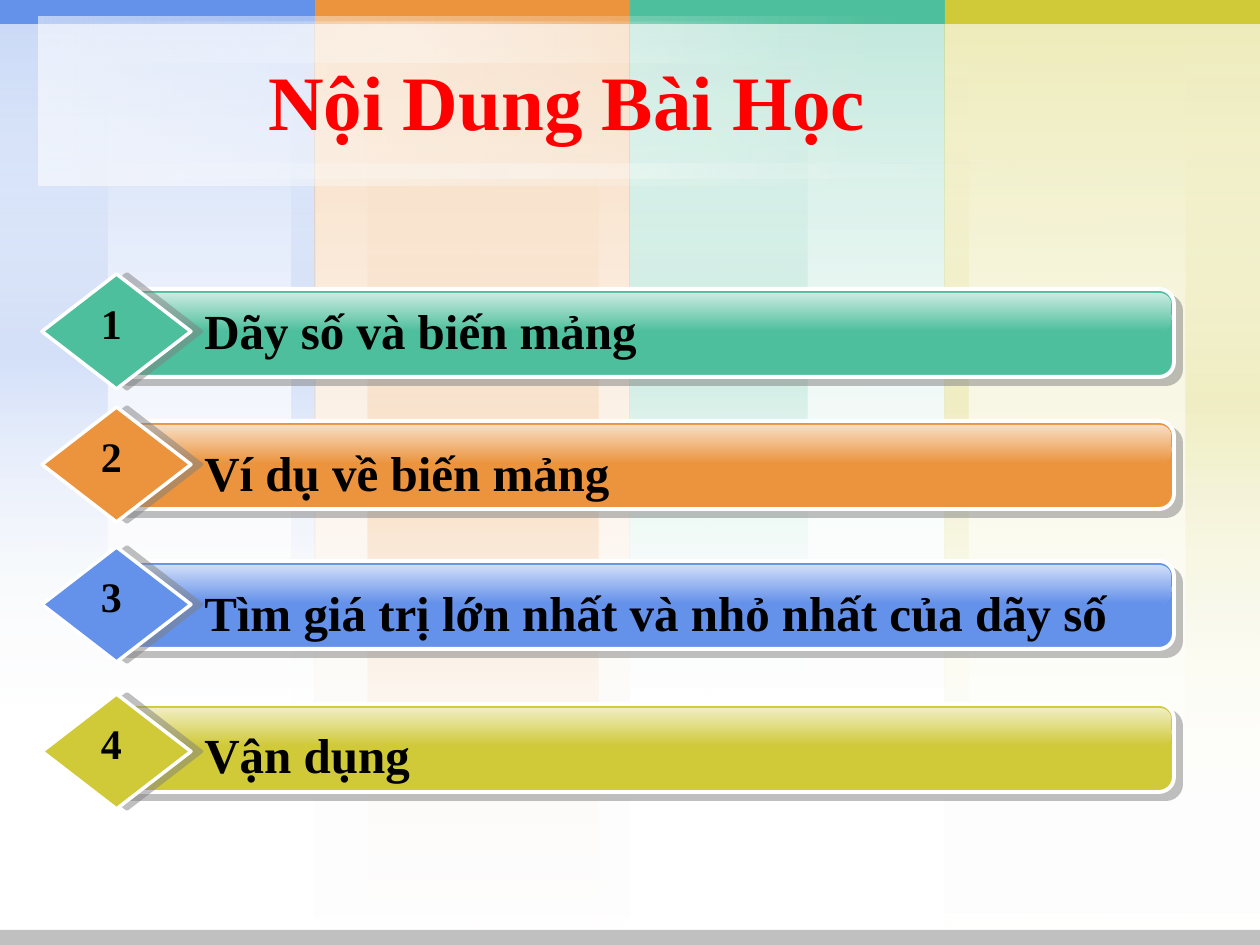
from lxml.etree import SubElement
from pptx import Presentation
from pptx.dml.color import RGBColor
from pptx.enum.shapes import MSO_SHAPE
from pptx.enum.text import MSO_ANCHOR, PP_ALIGN
from pptx.oxml.ns import qn
from pptx.util import Emu, Pt

BLUE = RGBColor(0x64, 0x91, 0xEA)
ORANGE = RGBColor(0xEB, 0x94, 0x3D)
GREEN = RGBColor(0x4D, 0xBF, 0x9C)
YELLOW = RGBColor(0xD0, 0xC9, 0x38)
WHITE = RGBColor(0xFF, 0xFF, 0xFF)
BLACK = RGBColor(0x00, 0x00, 0x00)
RED = RGBColor(0xFF, 0x00, 0x00)
SILVER = RGBColor(0xC0, 0xC0, 0xC0)
SHADOW = RGBColor(0x80, 0x80, 0x80)

WIDTH, HEIGHT = 1260, 945
COLUMN = WIDTH // 4


def px(length):
    return Emu(round(length * 914400 / 126))


class LessonSlide:
    """Draws the parts of a lesson outline in one shared style."""

    font_name = "Times New Roman"

    def __init__(self, presentation):
        self.slide = presentation.slides.add_slide(presentation.slide_layouts[5])
        self.shapes = self.slide.shapes

    def block(self, box, color=None, kind=MSO_SHAPE.RECTANGLE, radius=None):
        block = self.shapes.add_shape(kind, *map(px, box))
        block.shadow.inherit = False
        block.line.fill.background()
        if color is not None:
            block.fill.solid()
            block.fill.fore_color.rgb = color
        if radius is not None:
            block.adjustments[0] = radius
        return block

    def fade(self, box, stops, angle=90, **shape_style):
        block = self.block(box, **shape_style)
        block.fill.background()
        properties = block._element.spPr
        no_fill = properties.find(qn("a:noFill"))
        gradient = SubElement(properties, qn("a:gradFill"), rotWithShape="1")
        properties.replace(no_fill, gradient)
        stop_list = SubElement(gradient, qn("a:gsLst"))
        for position, color, opacity in stops:
            stop = SubElement(stop_list, qn("a:gs"), pos=str(position * 1000))
            self.tint(stop, color, opacity)
        SubElement(gradient, qn("a:lin"), ang=str(angle * 60000), scaled="0")

    def raised(self, box, color, line_width, distance, direction, **shape_style):
        block = self.block(box, color, **shape_style)
        block.line.color.rgb = WHITE
        block.line.width = Pt(line_width)
        effects = block._element.spPr.find(qn("a:effectLst"))
        self.drop_shadow(effects, SHADOW, distance, direction)

    def tint(self, parent, color, opacity):
        tint = SubElement(parent, qn("a:srgbClr"), val=str(color))
        SubElement(tint, qn("a:alpha"), val=str(opacity * 1000))

    def drop_shadow(self, effects, color, distance, direction):
        shadow = SubElement(effects, qn("a:outerShdw"), blurRad="0", dist=str(int(Pt(distance))),
                            dir=str(direction * 60000), algn="ctr", rotWithShape="0")
        self.tint(shadow, color, 50)

    def set_text(self, frame, text, size, color, align):
        frame.word_wrap = True
        paragraph = frame.paragraphs[0]
        paragraph.alignment = align
        paragraph.font.name = self.font_name
        paragraph.font.size = Pt(size)
        paragraph.font.bold = True
        paragraph.font.color.rgb = color
        run = paragraph.add_run()
        run.text = text
        return run

    def label(self, box, text, size, align=PP_ALIGN.LEFT, shadowed=False):
        frame = self.shapes.add_textbox(*map(px, box)).text_frame
        run = self.set_text(frame, text, size, BLACK, align)
        if shadowed:
            effects = SubElement(run._r.get_or_add_rPr(), qn("a:effectLst"))
            self.drop_shadow(effects, BLACK, 2, 45)

    def title(self, box, text):
        title = self.shapes.title
        self.shapes._spTree.append(title._element)
        title.left, title.top, title.width, title.height = map(px, box)
        title.text_frame.vertical_anchor = MSO_ANCHOR.MIDDLE
        self.set_text(title.text_frame, text, 44, RED, PP_ALIGN.CENTER)

    def column(self, index, color, height, bands, band_height):
        left = index * COLUMN
        wash = [(0, color, 20), (100, WHITE, 0)]
        glow = [(0, WHITE, 0), (50, color, 20), (100, WHITE, 0)]
        for _ in range(2):
            self.fade((left, 0, COLUMN, height), wash)
        for offset, width in bands:
            self.fade((left + offset, 0, width, band_height), glow)

    def topic(self, number, text, color, bar_top, diamond_top, text_top):
        self.raised((108, bar_top, 1066, 88), color, 2.25, 5.7, 45,
                    kind=MSO_SHAPE.ROUNDED_RECTANGLE, radius=0.17)
        self.fade((117, bar_top + 4, 1054, 39), [(0, WHITE, 70), (100, color, 70)],
                  kind=MSO_SHAPE.ROUNDED_RECTANGLE, radius=0.31)
        self.label((192, text_top, 1005, 72), text, 28, shadowed=True)
        self.raised((42, diamond_top, 149, 115), color, 2, 6, 0, kind=MSO_SHAPE.DIAMOND)
        self.label((73, diamond_top + 17, 77, 63), str(number), 24, PP_ALIGN.CENTER)


def main():
    presentation = Presentation()
    presentation.slide_width, presentation.slide_height = px(WIDTH), px(HEIGHT)
    lesson = LessonSlide(presentation)

    columns = [
        (BLUE, 708, [(0, 107), (292, 23)], 708),
        (ORANGE, 945, [(53, 231)], 945),
        (GREEN, 708, [(0, 178)], 708),
        (YELLOW, 941, [(0, 24), (241, 74)], 803),
    ]
    for index, column in enumerate(columns):
        lesson.column(index, *column)
    for index, (color, *_) in enumerate(columns):
        lesson.block((index * COLUMN, 0, COLUMN, 24), color)

    header_wash = [(0, WHITE, 35), (100, WHITE, 0)]
    header_glow = [(0, WHITE, 0), (50, WHITE, 35), (100, WHITE, 0)]
    for box, stops in [
        ((43, 164, 975, 15), header_glow),
        ((39, 17, 869, 169), header_wash),
        ((39, 22, 742, 41), header_glow),
        ((39, 17, 869, 169), header_wash),
    ]:
        lesson.fade(box, stops, angle=0)
    lesson.block((0, 930, WIDTH, 15), SILVER)
    lesson.title((63, 35, 1008, 130), "Nội Dung Bài Học")

    topics = [
        ("Dãy số và biến mảng", GREEN, 289, 274, 294),
        ("Ví dụ về biến mảng", ORANGE, 421, 407, 436),
        ("Tìm giá trị lớn nhất và nhỏ nhất của dãy số", BLUE, 561, 547, 576),
        ("Vận dụng", YELLOW, 704, 694, 718),
    ]
    for number, topic in enumerate(topics, start=1):
        lesson.topic(number, *topic)
    presentation.save("out.pptx")


if __name__ == "__main__":
    main()
